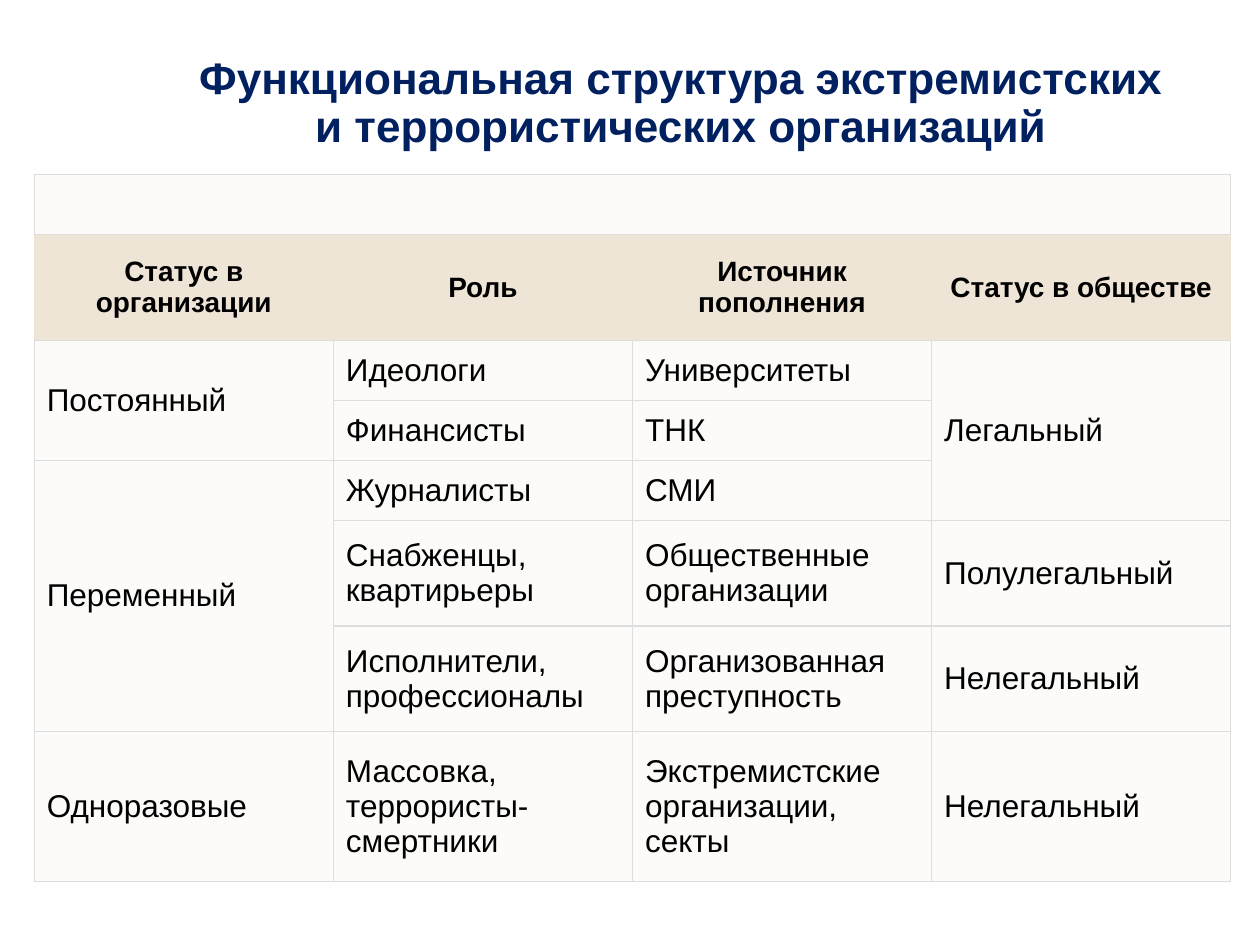
"""Build a slide with a table of roles and sources."""
from dataclasses import dataclass

from lxml import etree
from pptx import Presentation
from pptx import util as u
from pptx.dml.color import RGBColor
from pptx.enum import text
from pptx.oxml import ns

HUES = {"title": "002060", "head": "EEE5D6", "body": "FCFBF9", "rule": "DDDDDD", "ink": "000000"}
FONT = "Arial"
WIDTH = 6.03
TALL = [1.21, 2.13, 1.21, 1.21, 1.21, 2.13, 2.13, 3.02]


@dataclass
class Entry:
    row: int
    col: int
    words: str = ""
    down: int = 1
    over: int = 1


HEADS = ["Статус в организации", "Роль", "Источник пополнения", "Статус в обществе"]
ROLES = ["Идеологи", "Финансисты", "Журналисты", "Снабженцы, квартирьеры",
         "Исполнители, профессионалы", "Массовка, террористы-смертники"]
ROOTS = ["Университеты", "ТНК", "СМИ", "Общественные организации",
         "Организованная преступность", "Экстремистские организации, секты"]
ITEMS = [
    Entry(0, 0, over=4),
    *(Entry(1, col, words) for col, words in enumerate(HEADS)),
    *(Entry(row, 1, words) for row, words in enumerate(ROLES, 2)),
    *(Entry(row, 2, words) for row, words in enumerate(ROOTS, 2)),
    Entry(2, 0, "Постоянный", down=2),
    Entry(4, 0, "Переменный", down=3),
    Entry(7, 0, "Одноразовые"),
    Entry(2, 3, "Легальный", down=3),
    Entry(5, 3, "Полулегальный"),
    Entry(6, 3, "Нелегальный"),
    Entry(7, 3, "Нелегальный"),
]


def style(para, size: float, hue: str, bold: bool, mid: bool) -> None:
    """Set the font and alignment of a paragraph."""
    para.alignment = text.PP_ALIGN.CENTER if mid else text.PP_ALIGN.LEFT
    para.font.name = FONT
    para.font.size = u.Pt(size)
    para.font.bold = bold
    para.font.color.rgb = RGBColor.from_string(HUES[hue])


def edge(cell, side: str, shown: bool) -> None:
    """Add one border to a cell."""
    line = etree.SubElement(cell._tc.get_or_add_tcPr(), ns.qn(f"a:ln{side}"), w=str(u.Pt(0.75)))
    if shown:
        fill = etree.SubElement(line, ns.qn("a:solidFill"))
        etree.SubElement(fill, ns.qn("a:srgbClr"), val=HUES["rule"])
    else:
        etree.SubElement(line, ns.qn("a:noFill"))


def paint(cell, head: bool) -> None:
    """Give a cell its borders, fill and anchor."""
    for side in "LRTB":
        edge(cell, side, not head or side in "TB")
    cell.fill.solid()
    cell.fill.fore_color.rgb = RGBColor.from_string(HUES["head" if head else "body"])
    cell.vertical_anchor = text.MSO_ANCHOR.MIDDLE


def enter(grid, item: Entry) -> None:
    """Write one entry and merge the cells it spans."""
    cell = grid.cell(item.row, item.col)
    if item.down > 1 or item.over > 1:
        cell.merge(grid.cell(item.row + item.down - 1, item.col + item.over - 1))
    head = item.row == 1
    cell.text = item.words
    style(cell.text_frame.paragraphs[0], 16 if head else 18, "ink", head, head)


def table(slide) -> None:
    """Draw the table."""
    frame = slide.shapes.add_table(len(TALL), len(HEADS), u.Cm(0.69), u.Cm(3.52),
                                   u.Cm(WIDTH * len(HEADS)), u.Cm(sum(TALL)))
    grid = frame.table
    grid.first_row = grid.horz_banding = False
    for col in grid.columns:
        col.width = u.Cm(WIDTH)
    for index, (row, tall) in enumerate(zip(grid.rows, TALL)):
        row.height = u.Cm(tall)
        for cell in row.cells:
            paint(cell, index == 1)
    for item in ITEMS:
        enter(grid, item)


def title(slide) -> None:
    """Draw the slide title."""
    box = slide.shapes.add_textbox(u.Cm(3.3), u.Cm(0.91), u.Cm(20.85), u.Cm(2.39))
    frame = box.text_frame
    frame.word_wrap = True
    frame.vertical_anchor = text.MSO_ANCHOR.MIDDLE
    para = frame.paragraphs[0]
    para.text = "Функциональная структура экстремистских\vи террористических организаций"
    para.line_spacing = 0.9
    style(para, 25.2, "title", True, True)


def main() -> None:
    """Build and save the slide."""
    deck = Presentation()
    deck.slide_width, deck.slide_height = u.Cm(25.4), u.Cm(19.05)
    slide = deck.slides.add_slide(deck.slide_layouts[6])
    table(slide)
    title(slide)
    deck.save("out.pptx")


if __name__ == "__main__":
    main()
